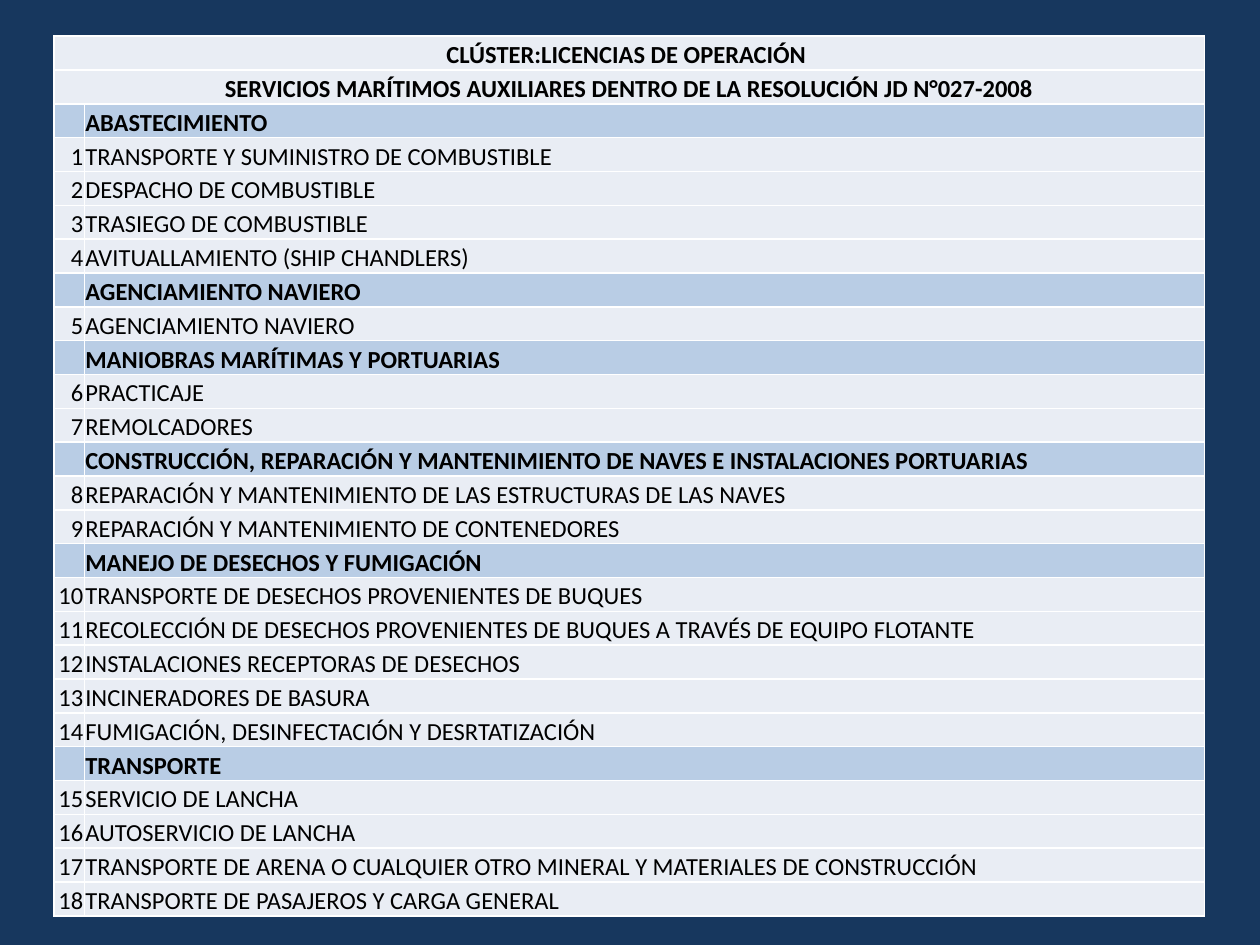
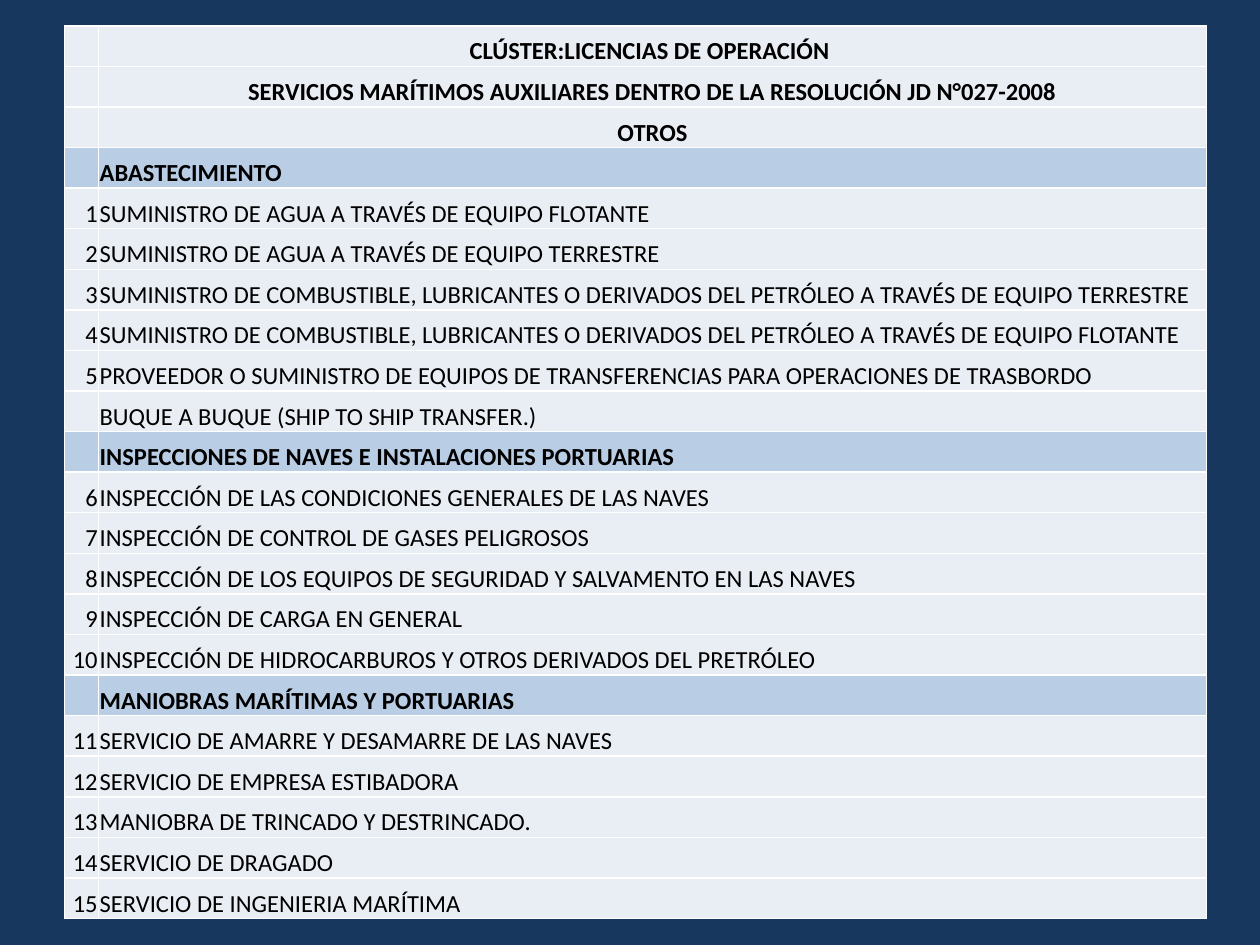
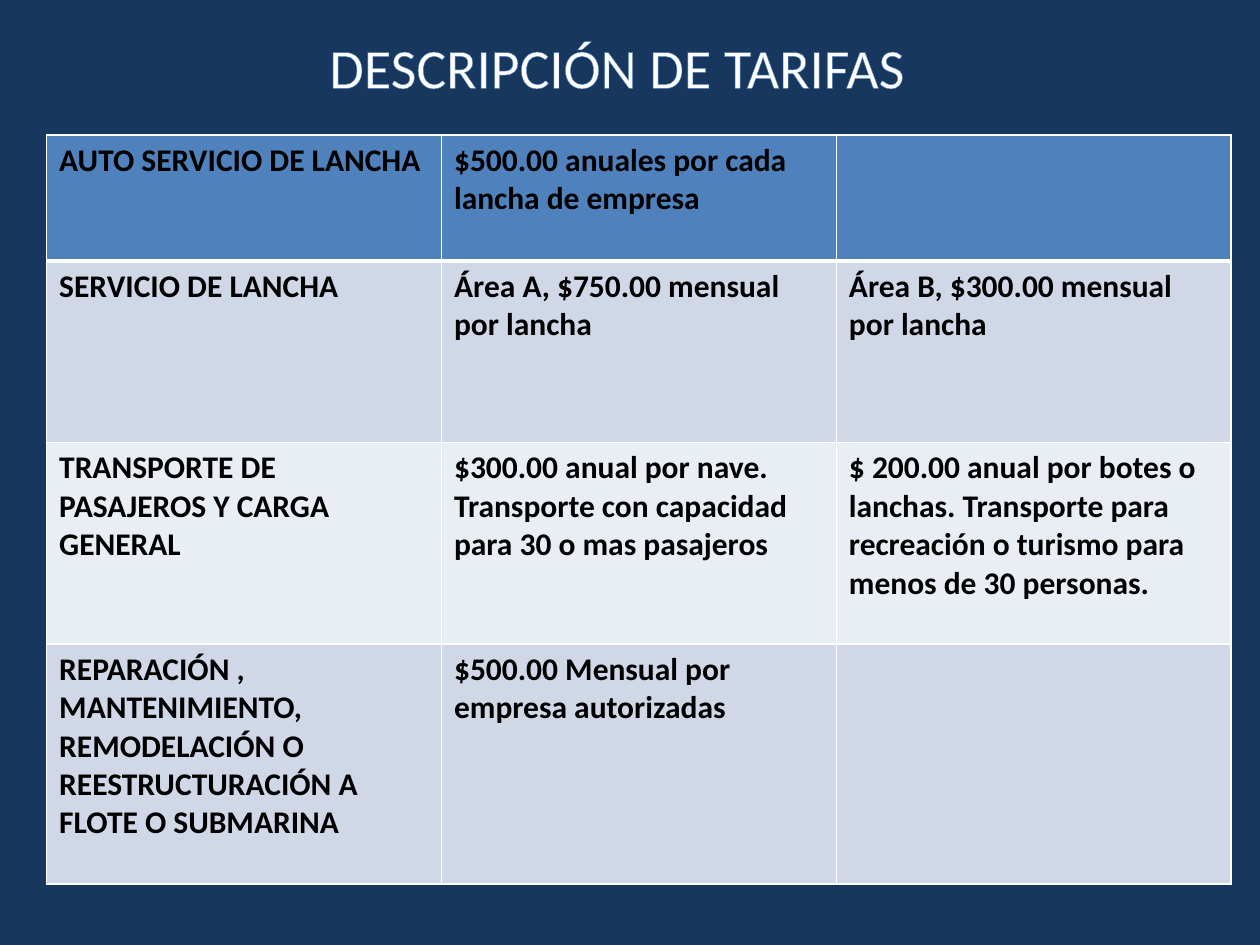
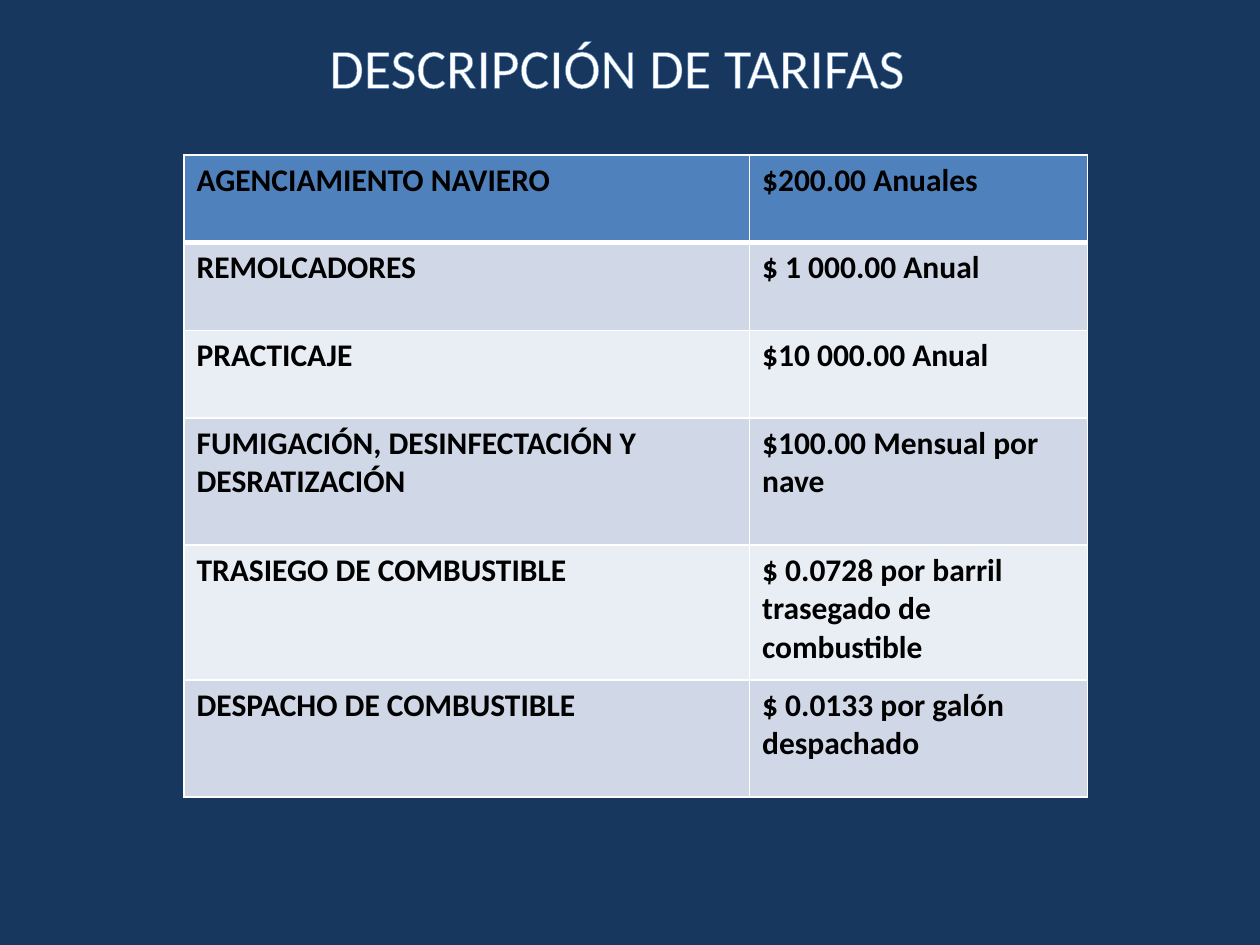
from dataclasses import dataclass

from pptx import Presentation
from pptx.dml.color import RGBColor
from pptx.enum.text import MSO_ANCHOR, PP_ALIGN
from pptx.oxml.xmlchemy import OxmlElement
from pptx.util import Cm, Pt


@dataclass(frozen=True)
class Theme:
    font: str = "Calibri"
    navy: str = "17375E"
    white: str = "FFFFFF"
    black: str = "000000"
    accent: str = "4F81BD"
    section: str = "B9CDE5"
    band: str = "D0D8E8"
    pale: str = "E9EDF4"
    title_size: int = 32
    fee_size: int = 18
    list_size: int = 14
    thin: float = 1
    thick: float = 3
    outline: float = 0.8


CLUSTER = (
    "CLÚSTER:LICENCIAS DE OPERACIÓN ",
    "SERVICIOS MARÍTIMOS AUXILIARES DENTRO DE LA RESOLUCIÓN JD N°027-2008",
)

LICENCES = {
    "ABASTECIMIENTO": (
        "TRANSPORTE Y SUMINISTRO DE COMBUSTIBLE",
        "DESPACHO DE COMBUSTIBLE",
        "TRASIEGO DE COMBUSTIBLE",
        "AVITUALLAMIENTO (SHIP CHANDLERS)",
    ),
    "AGENCIAMIENTO NAVIERO": ("AGENCIAMIENTO NAVIERO",),
    "MANIOBRAS MARÍTIMAS Y PORTUARIAS": ("PRACTICAJE", "REMOLCADORES"),
    "CONSTRUCCIÓN, REPARACIÓN Y MANTENIMIENTO DE NAVES E INSTALACIONES PORTUARIAS": (
        "REPARACIÓN Y MANTENIMIENTO DE LAS ESTRUCTURAS DE LAS NAVES",
        "REPARACIÓN Y MANTENIMIENTO DE CONTENEDORES",
    ),
    "MANEJO DE DESECHOS Y FUMIGACIÓN": (
        "TRANSPORTE DE DESECHOS PROVENIENTES DE BUQUES",
        "RECOLECCIÓN DE DESECHOS PROVENIENTES DE BUQUES A TRAVÉS DE EQUIPO FLOTANTE",
        "INSTALACIONES RECEPTORAS DE DESECHOS",
        "INCINERADORES DE BASURA",
        "FUMIGACIÓN, DESINFECTACIÓN Y DESRTATIZACIÓN",
    ),
    "TRANSPORTE": (
        "SERVICIO DE LANCHA",
        "AUTOSERVICIO DE LANCHA",
        "TRANSPORTE DE ARENA O CUALQUIER OTRO MINERAL Y MATERIALES DE CONSTRUCCIÓN",
        "TRANSPORTE DE PASAJEROS Y CARGA GENERAL",
    ),
}

OTHER_LICENCES = {
    "ABASTECIMIENTO": (
        "SUMINISTRO DE AGUA A TRAVÉS DE EQUIPO FLOTANTE",
        "SUMINISTRO DE AGUA A TRAVÉS DE EQUIPO TERRESTRE",
        "SUMINISTRO DE COMBUSTIBLE, LUBRICANTES O DERIVADOS DEL PETRÓLEO A TRAVÉS DE EQUIPO TERRESTRE",
        "SUMINISTRO DE COMBUSTIBLE, LUBRICANTES O DERIVADOS DEL PETRÓLEO A TRAVÉS DE EQUIPO FLOTANTE",
        "PROVEEDOR O SUMINISTRO DE EQUIPOS DE TRANSFERENCIAS PARA OPERACIONES DE TRASBORDO\n"
        "BUQUE A BUQUE (SHIP TO SHIP TRANSFER.)",
    ),
    "INSPECCIONES DE NAVES E INSTALACIONES PORTUARIAS": (
        "INSPECCIÓN DE LAS CONDICIONES GENERALES DE LAS NAVES",
        "INSPECCIÓN DE CONTROL DE GASES PELIGROSOS",
        "INSPECCIÓN DE LOS EQUIPOS DE SEGURIDAD Y SALVAMENTO EN LAS NAVES",
        "INSPECCIÓN DE CARGA EN GENERAL",
        "INSPECCIÓN DE HIDROCARBUROS Y OTROS DERIVADOS DEL PRETRÓLEO",
    ),
    "MANIOBRAS MARÍTIMAS Y PORTUARIAS": (
        "SERVICIO DE AMARRE Y DESAMARRE DE LAS NAVES",
        "SERVICIO DE EMPRESA ESTIBADORA",
        "MANIOBRA DE TRINCADO Y DESTRINCADO.",
        "SERVICIO DE DRAGADO",
        "SERVICIO DE INGENIERIA MARÍTIMA",
    ),
}

LAUNCH_FEES = (
    ("AUTO SERVICIO DE LANCHA", "$500.00 anuales por cada lancha de empresa", ""),
    ("SERVICIO DE LANCHA", "Área A, $750.00 mensual por lancha", "Área B, $300.00 mensual por lancha"),
    (
        "TRANSPORTE DE PASAJEROS Y CARGA GENERAL",
        "$300.00 anual por nave. Transporte con capacidad para 30 o mas pasajeros",
        "$ 200.00 anual por botes o lanchas. Transporte para recreación o turismo para menos de 30 personas.",
    ),
    (
        "REPARACIÓN , MANTENIMIENTO, REMODELACIÓN O REESTRUCTURACIÓN A FLOTE O SUBMARINA",
        "$500.00 Mensual por empresa autorizadas",
        "",
    ),
)

SHIP_FEES = (
    ("AGENCIAMIENTO NAVIERO", "$200.00 Anuales"),
    ("REMOLCADORES", "$ 1 000.00 Anual"),
    ("PRACTICAJE", "$10 000.00 Anual"),
    ("FUMIGACIÓN, DESINFECTACIÓN Y DESRATIZACIÓN", "$100.00 Mensual por nave"),
    ("TRASIEGO DE COMBUSTIBLE", "$ 0.0728 por barril trasegado de combustible"),
    ("DESPACHO DE COMBUSTIBLE", "$ 0.0133 por galón despachado"),
)

LIST_CELL = dict(
    vertical_anchor=MSO_ANCHOR.BOTTOM,
    margin_left=Cm(0.02),
    margin_right=Cm(0.02),
    margin_top=Cm(0.02),
    margin_bottom=0,
)


def assign(target, values):
    for name, value in values.items():
        setattr(target, name, value)


def line_xml(tag, width, color):
    line = OxmlElement(tag)
    line.set("w", str(Pt(width)))
    fill = OxmlElement("a:solidFill")
    rgb = OxmlElement("a:srgbClr")
    rgb.set("val", color)
    fill.append(rgb)
    line.append(fill)
    return line


class Deck:
    def __init__(self, theme):
        self.theme = theme
        self.deck = Presentation()
        assign(self.deck, dict(slide_width=Cm(25.4), slide_height=Cm(19.05)))
        self.page = None

    def new_page(self):
        self.page = self.deck.slides.add_slide(self.deck.slide_layouts[6])
        fill = self.page.background.fill
        fill.solid()
        fill.fore_color.rgb = RGBColor.from_string(self.theme.navy)

    def set_text(self, para, text, size, color, bold=False, align=PP_ALIGN.LEFT):
        para.alignment = align
        if not text:
            end = OxmlElement("a:endParaRPr")
            end.set("sz", str(size * 100))
            para._p.append(end)
            return None
        span = para.add_run()
        span.text = text
        assign(span.font, dict(name=self.theme.font, size=Pt(size), bold=bold))
        span.font.color.rgb = RGBColor.from_string(color)
        return span

    def title(self, text):
        theme = self.theme
        box = self.page.shapes.add_textbox(0, Cm(0.53), Cm(24.89), Cm(1.63))
        box.text_frame.word_wrap = True
        para = box.text_frame.paragraphs[0]
        span = self.set_text(para, text, theme.title_size, theme.white, align=PP_ALIGN.CENTER)
        span.font._element.insert(0, line_xml("a:ln", theme.outline, theme.accent))

    def table(self, left, top, widths, heights):
        frame = self.page.shapes.add_table(
            len(heights), len(widths), Cm(left), Cm(top), Cm(sum(widths)), Cm(sum(heights))
        )
        table = frame.table
        table.horz_banding = False
        for column, width in zip(table.columns, widths):
            column.width = Cm(width)
        for row, height in zip(table.rows, heights):
            row.height = Cm(height)
        return table

    def cell(self, cell, text, fill, size, bold, align=PP_ALIGN.LEFT, layout=None, top=1, bottom=1):
        properties = cell._tc.get_or_add_tcPr()
        sides = dict(L=self.theme.thin, R=self.theme.thin, T=top, B=bottom)
        for side, width in sides.items():
            properties.append(line_xml(f"a:ln{side}", width, self.theme.white))
        cell.fill.solid()
        cell.fill.fore_color.rgb = RGBColor.from_string(fill)
        assign(cell, layout or {})
        self.set_text(cell.text_frame.paragraphs[0], text, size, self.theme.black, bold, align)

    def licence_table(self, left, top, widths, height, headings, sections, merge_headings=False):
        theme = self.theme
        rows = [("", text, theme.pale, True, PP_ALIGN.CENTER) for text in headings]
        number = 0
        for section, services in sections.items():
            rows.append(("", section, theme.section, True, PP_ALIGN.LEFT))
            for service in services:
                number += 1
                for index, text in enumerate(service.split("\n")):
                    label = "" if index else str(number)
                    rows.append((label, text, theme.pale, False, PP_ALIGN.LEFT))
        table = self.table(left, top, widths, [height / len(rows)] * len(rows))
        table.first_row = False
        for index, (label, text, fill, bold, align) in enumerate(rows):
            merged = merge_headings and index < len(headings)
            first, second = table.cell(index, 0), table.cell(index, 1)
            if merged:
                first.merge(second)
                label, text = text, ""
            label_align = align if merged else PP_ALIGN.RIGHT
            self.cell(first, label, fill, theme.list_size, bold, label_align, LIST_CELL)
            self.cell(second, text, fill, theme.list_size, bold, align, LIST_CELL)

    def fee_table(self, left, top, widths, heights, fees):
        theme = self.theme
        table = self.table(left, top, widths, heights)
        for row, texts in enumerate(fees):
            fill = theme.accent if row == 0 else (theme.pale, theme.band)[row % 2]
            borders = dict(
                top=theme.thick if row == 1 else theme.thin,
                bottom=theme.thick if row == 0 else theme.thin,
            )
            for column, text in enumerate(texts):
                self.cell(table.cell(row, column), text, fill, theme.fee_size, True, **borders)


def main():
    deck = Deck(Theme())

    deck.new_page()
    deck.licence_table(1.09, 0.73, (0.61, 22.58), 17.75, CLUSTER, LICENCES, merge_headings=True)

    deck.new_page()
    deck.licence_table(1.3, 0.52, (0.69, 22.33), 18, CLUSTER + ("OTROS",), OTHER_LICENCES)

    fee_pages = (
        (0.94, 2.72, (7.96,) * 3, (2.54, 3.66, 4.06, 4.84), LAUNCH_FEES),
        (3.71, 3.12, (11.4, 6.81), (1.77, 1.77, 1.77, 2.56, 2.72, 2.36), SHIP_FEES),
    )
    for fee_page in fee_pages:
        deck.new_page()
        deck.title("DESCRIPCIÓN DE TARIFAS")
        deck.fee_table(*fee_page)

    deck.deck.save("out.pptx")


if __name__ == "__main__":
    main()
